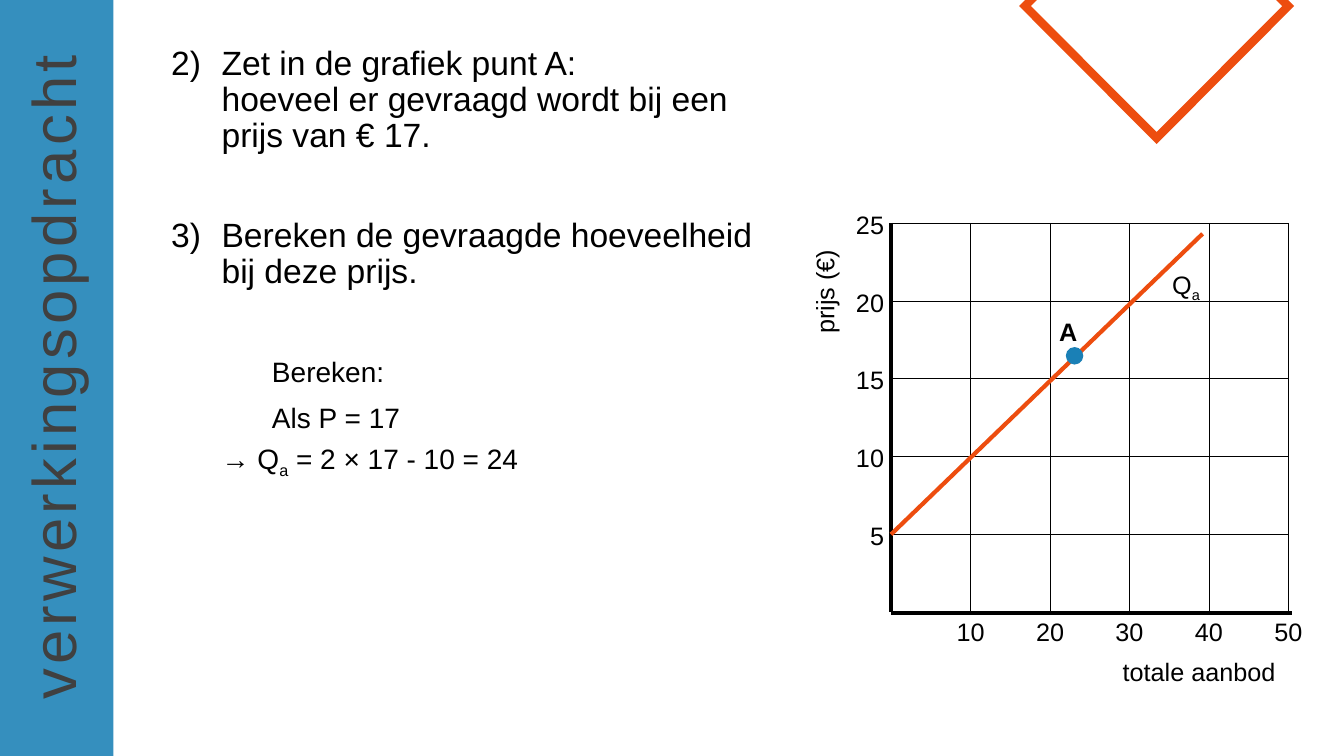
from dataclasses import dataclass

from lxml.etree import SubElement
from pptx import Presentation
from pptx.dml.color import RGBColor
from pptx.enum.dml import MSO_LINE
from pptx.enum.shapes import MSO_CONNECTOR, MSO_SHAPE
from pptx.enum.text import MSO_ANCHOR, PP_ALIGN
from pptx.oxml.ns import qn
from pptx.util import Pt


@dataclass(frozen=True)
class Theme:
    font: str = "Arial"
    black: RGBColor = RGBColor(0x00, 0x00, 0x00)
    grey: RGBColor = RGBColor(0x40, 0x40, 0x40)
    blue: RGBColor = RGBColor(0x1A, 0x80, 0xB6)
    orange: RGBColor = RGBColor(0xED, 0x4D, 0x0F)
    title: int = 44
    body: int = 24
    work: int = 20
    label: int = 18


THEME = Theme()

# Plot area: origin, grid steps and number of steps, in points
LEFT, BASE = 636.5, 437.3
STEP_X, STEP_Y, COUNT = 56.75, 55.6, 5
RIGHT, TOP = LEFT + COUNT * STEP_X, BASE - COUNT * STEP_Y


def put(item, values):
    """Set each attribute named in values."""
    for name, value in values.items():
        setattr(item, name, value)


def add_run(para, text, size, color=THEME.black, bold=False, **attrs):
    """Add a run; attrs are extra run attributes such as spc or baseline."""
    run = para.add_run()
    run.text = text
    put(run.font, {"name": THEME.font, "size": Pt(size), "bold": bold})
    run.font.color.rgb = color
    for name, value in attrs.items():
        run._r.get_or_add_rPr().set(name, str(value))


def add_box(slide, left, top, width, height, **frame):
    """Add a text box and return it."""
    box = slide.shapes.add_textbox(Pt(left), Pt(top), Pt(width), Pt(height))
    put(box.text_frame, {"word_wrap": False, "vertical_anchor": MSO_ANCHOR.TOP, **frame})
    return box


def add_label(slide, text, place, size=THEME.label, align=PP_ALIGN.LEFT, turn=0, sub="", **style):
    """Add one line of text, with an optional subscript."""
    box = add_box(slide, *place, word_wrap=align != PP_ALIGN.LEFT)
    box.rotation = turn
    para = box.text_frame.paragraphs[0]
    para.alignment = align
    add_run(para, text, size, **style)
    if sub:
        add_run(para, sub, size, baseline=-25000)


def add_line(slide, start, end, color=THEME.black, width=3, dash=None):
    """Add a straight line without a shadow."""
    ends = [Pt(value) for value in (*start, *end)]
    line = slide.shapes.add_connector(MSO_CONNECTOR.STRAIGHT, *ends)
    line.line.color.rgb = color
    put(line.line, {"width": Pt(width), "dash_style": dash})
    SubElement(line._element.spPr, qn("a:effectLst"))


def add_solid(slide, kind, place, color):
    """Add a filled shape without an outline."""
    shape = slide.shapes.add_shape(kind, *[Pt(value) for value in place])
    shape.shadow.inherit = False
    shape.fill.solid()
    shape.fill.fore_color.rgb = color
    shape.line.fill.background()
    return shape


def add_corner(slide):
    """Draw the diamond that hangs from the top edge."""
    build = slide.shapes.build_freeform(Pt(741.5), Pt(-5))
    points = [(732.2, 4.3), (826.2, 98.6), (920.2, 4.3), (910.9, -5)]
    build.add_line_segments([(Pt(x), Pt(y)) for x, y in points], close=False)
    shape = build.convert_to_shape()
    shape.shadow.inherit = False
    shape.fill.background()
    shape.line.color.rgb = THEME.orange
    shape.line.width = Pt(6)
    SubElement(shape._element.spPr.find(qn("a:ln")), qn("a:miter"), lim="800000")


def add_para(frame, runs, size, indent, gap, space, number=False):
    """Fill the next paragraph of the frame; a run of None breaks the line."""
    first = frame.paragraphs[0]
    para = frame.add_paragraph() if first.runs else first
    put(para, {"space_before": Pt(gap), "line_spacing": space})
    props = para._p.get_or_add_pPr()
    props.set("marL", str(Pt(indent)))
    props.set("indent", str(Pt(-36 if number else 0)))
    if number:
        SubElement(props, qn("a:buFont"), typeface=THEME.font)
        SubElement(props, qn("a:buAutoNum"), type="arabicParenR", startAt="2")
    for text, attrs in runs:
        if text is None:
            para.add_line_break()
        else:
            add_run(para, text, size, **attrs)


def add_side(slide):
    """Draw the side band with its upright title."""
    band = add_solid(slide, MSO_SHAPE.RECTANGLE, (0, 0, 81, 540), THEME.blue)
    color = band.fill._xPr.find(".//" + qn("a:srgbClr"))
    SubElement(color, qn("a:alpha"), val="88000")
    add_label(slide, "verwerkingsopdracht", (-203.8, 235.4, 482.4, 60.5),
              THEME.title, turn=270, color=THEME.grey, spc=300)


def add_task(slide):
    """Write the questions and the calculation."""
    frame = add_box(slide, 115.2, 29.5, 438.5, 489.6, word_wrap=True).text_frame
    runs = [("Zet in de grafiek punt A:", {}), (None, {}),
            ("hoeveel er gevraagd wordt bij een prijs van € 17.", {})]
    add_para(frame, runs, THEME.body, 36, 0, 0.9, True)
    runs = [("Bereken de gevraagde hoeveelheid bij deze prijs.", {})]
    add_para(frame, runs, THEME.body, 36, 45, 0.9, True)
    add_para(frame, [("Bereken:", {})], THEME.work, 72, 47, 0.96)
    add_para(frame, [("Als P = 17", {})], THEME.work, 72, 10, 0.96)
    runs = [("→ Q", {}), ("a", {"baseline": -25000}), (" = 2 × 17 - 10 = 24", {})]
    add_para(frame, runs, THEME.work, 36, 5, 0.96)


def add_graph(slide):
    """Draw the grid, axes, supply line and point A."""
    # Grid with tick labels
    thin = {"width": 0.25, "dash": MSO_LINE.ROUND_DOT}
    for step in range(1, COUNT + 1):
        x, y = LEFT + step * STEP_X, BASE - step * STEP_Y
        add_line(slide, (LEFT, y), (RIGHT, y), **thin)
        add_line(slide, (x, TOP), (x, BASE), **thin)
        add_label(slide, str(step * 5), (598.5, y - 13.5, 40, 29), align=PP_ALIGN.RIGHT)
        add_label(slide, str(step * 10), (x - 20, 437, 40, 29), align=PP_ALIGN.CENTER)

    # Axes and their titles
    add_line(slide, (LEFT, TOP), (LEFT, BASE))
    add_line(slide, (LEFT, BASE + 0.5), (923, BASE + 0.5))
    add_label(slide, "totale aanbod", (794.9, 465.1, 124.6, 28.8))
    add_label(slide, "prijs (€)", (551.5, 193.7, 74.9, 28.8), turn=270)

    # Supply line and point A
    add_line(slide, (LEFT, BASE - STEP_Y), (859, 167), THEME.orange)
    add_label(slide, "Q", (830.2, 188.6, 35.3, 28.8), sub="a")
    add_label(slide, "A", (749.5, 222.5, 27.4, 28.8), bold=True)
    add_solid(slide, MSO_SHAPE.OVAL, (761.3, 247.9, 12.5, 12.5), THEME.blue)


def main():
    deck = Presentation()
    put(deck, {"slide_width": Pt(960), "slide_height": Pt(540)})
    slide = deck.slides.add_slide(deck.slide_layouts[6])
    add_corner(slide)
    add_side(slide)
    add_task(slide)
    add_graph(slide)
    deck.save("out.pptx")


if __name__ == "__main__":
    main()
